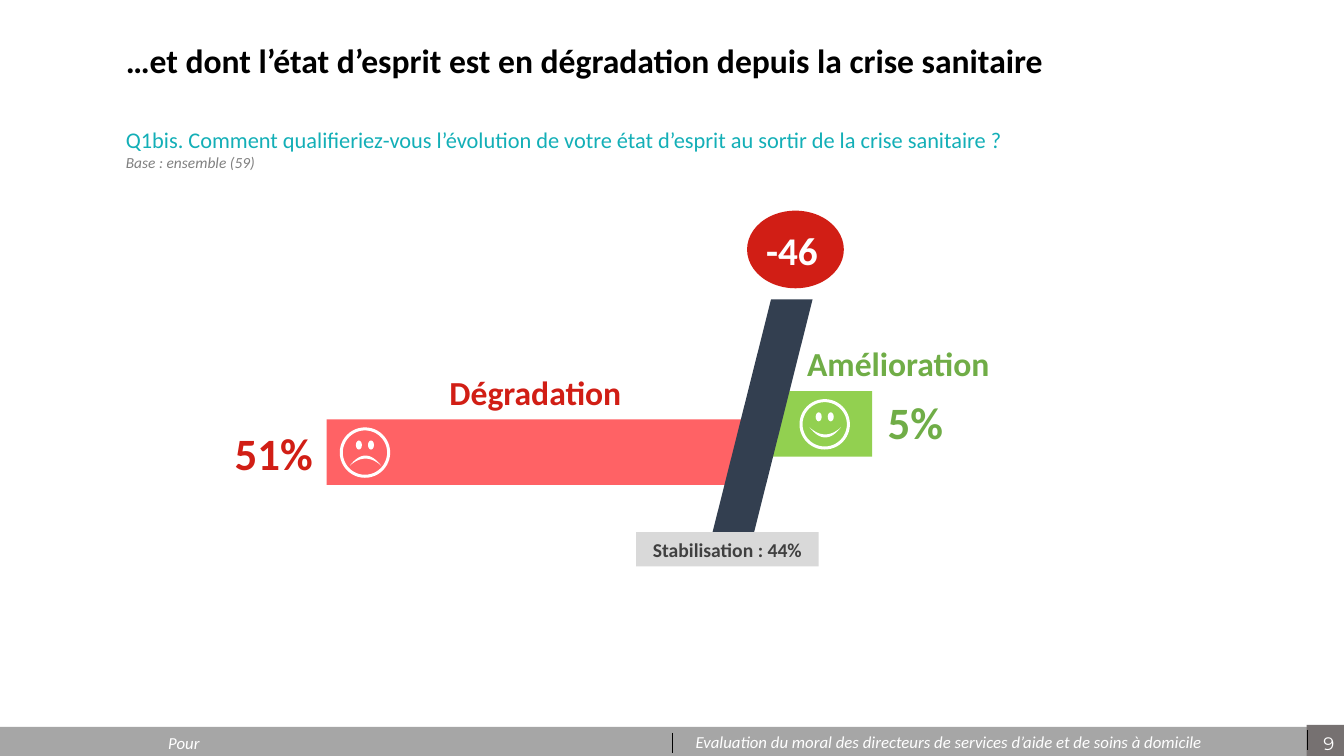
from lxml.etree import SubElement
from pptx import Presentation
from pptx.dml.color import RGBColor
from pptx.enum.shapes import MSO_CONNECTOR, MSO_SHAPE
from pptx.enum.text import MSO_ANCHOR, PP_ALIGN
from pptx.oxml.ns import qn
from pptx.util import Emu, Pt

PX = 9144  # 100 px to the inch
WIDTH, HEIGHT = 1333, 750

WHITE = RGBColor(0xFF, 0xFF, 0xFF)
BLACK = RGBColor(0x00, 0x00, 0x00)
FOOTER_GREY = RGBColor(0xA6, 0xA6, 0xA6)
NUMBER_GREY = RGBColor(0x76, 0x71, 0x71)
BASE_GREY = RGBColor(0x80, 0x80, 0x80)
LABEL_GREY = RGBColor(0xD9, 0xD9, 0xD9)
DARK_GREY = RGBColor(0x40, 0x40, 0x40)
TEAL = RGBColor(0x13, 0xAF, 0xB7)
NAVY = RGBColor(0x33, 0x3F, 0x50)
RED = RGBColor(0xD1, 0x1E, 0x15)
CORAL = RGBColor(0xFF, 0x62, 0x65)
GREEN = RGBColor(0x70, 0xAD, 0x47)
LIME = RGBColor(0x92, 0xD0, 0x50)


def write(paragraph, text, size=12, color=BLACK, bold=False, italic=False,
          align=PP_ALIGN.LEFT, spacing=1.0, font="Calibri"):
    paragraph.alignment = align
    paragraph.line_spacing = spacing
    span = paragraph.add_run()
    span.text = text
    span.font.name = font
    span.font.size = Pt(size)
    span.font.bold = bold
    span.font.italic = italic
    span.font.color.rgb = color


class SlidePainter:
    def __init__(self, page):
        self.shapes = page.shapes

    def plain(self, shape, fill):
        shape.shadow.inherit = False
        shape.fill.solid()
        shape.fill.fore_color.rgb = fill
        shape.line.fill.background()
        return shape

    def shape(self, kind, left, top, width, height, fill):
        place = [Emu(value * PX) for value in (left, top, width, height)]
        return self.plain(self.shapes.add_shape(kind, *place), fill)

    def text(self, left, top, width, height, text, wrap=True,
             anchor=MSO_ANCHOR.TOP, **style):
        place = [Emu(value * PX) for value in (left, top, width, height)]
        frame = self.shapes.add_textbox(*place).text_frame
        frame.word_wrap = wrap
        frame.vertical_anchor = anchor
        write(frame.paragraphs[0], text, **style)
        return frame

    def divider(self, x, top, bottom):
        line = self.shapes.add_connector(
            MSO_CONNECTOR.STRAIGHT, x * PX, top * PX, x * PX, bottom * PX)
        line.line.color.rgb = BLACK
        line.line.width = Pt(0.5)
        SubElement(line._element.spPr, qn("a:effectLst"))

    def mouth(self, left, corner, bend):
        """Crescent 31 px wide whose middle lies bend px below its corners."""
        steps = 24

        def curve(depth, order):
            return [(round((left + 31 * step / steps) * PX),
                     round((corner + 4 * depth * step * (steps - step) / steps ** 2) * PX))
                    for step in order]

        points = curve(bend, range(steps + 1)) + curve(0.7 * bend, range(steps, -1, -1))
        builder = self.shapes.build_freeform(*points[0], scale=1.0)
        builder.add_line_segments(points[1:], close=True)
        self.plain(builder.convert_to_shape(), WHITE)

    def face(self, left, top, happy):
        ring = self.shape(MSO_SHAPE.DONUT, left, top, 50, 50, WHITE)
        ring.adjustments[0] = 0.06
        for offset in (16, 28):
            self.shape(MSO_SHAPE.OVAL, left + offset, top + 13, 6, 9, WHITE)
        if happy:
            self.mouth(left + 10, top + 28, 10)
        else:
            self.mouth(left + 10, top + 38, -10)


def main():
    deck = Presentation()
    deck.slide_width, deck.slide_height = Emu(WIDTH * PX), Emu(HEIGHT * PX)
    painter = SlidePainter(deck.slides.add_slide(deck.slide_layouts[6]))
    center = PP_ALIGN.CENTER

    # Footer
    painter.shape(MSO_SHAPE.RECTANGLE, 0, 721, WIDTH, 29, FOOTER_GREY)
    painter.shape(MSO_SHAPE.RECTANGLE, 1296, 719, 37, 31, NUMBER_GREY)
    painter.divider(1297, 724, 744)
    painter.text(1291, 722, 54, 32, "9", wrap=False, size=12.9, color=WHITE,
                 align=center, font="Montserrat")
    painter.text(157, 722, 52, 30, "Pour", wrap=False, color=WHITE, italic=True)
    painter.text(680, 721, 575, 30,
                 "Evaluation du moral des directeurs de services d’aide et de soins à domicile",
                 color=WHITE, italic=True)
    painter.divider(667, 727, 747)

    # Title and question
    painter.text(115, 31, 1150, 62,
                 "…et dont l’état d’esprit est en dégradation depuis la crise sanitaire",
                 anchor=MSO_ANCHOR.MIDDLE, size=24, bold=True, spacing=0.9)
    question = painter.text(
        115, 123, 1055, 55,
        "Q1bis. Comment qualifieriez-vous l’évolution de votre état d’esprit "
        "au sortir de la crise sanitaire ?",
        size=16, color=TEAL, spacing=0.9)
    write(question.add_paragraph(), "Base : ensemble (59)", size=11,
          color=BASE_GREY, italic=True)

    # Bars on either side of the slanted axis
    painter.shape(MSO_SHAPE.RECTANGLE, 749, 388, 116, 65, LIME)
    painter.shape(MSO_SHAPE.RECTANGLE, 324, 416, 418, 65, CORAL)
    axis = painter.shape(MSO_SHAPE.PARALLELOGRAM, 703, 297, 103, 246, NAVY)
    axis.adjustments[0] = 0.6

    # Values and headings
    for left, top, width, value, color in ((870, 387, 76, "5%", GREEN),
                                           (222, 417, 99, "51%", RED)):
        painter.text(left, top, width, 64, value, wrap=False, size=32,
                     color=color, bold=True, align=center)
    for left, top, width, heading, color in ((407, 364, 248, "Dégradation", RED),
                                             (773, 335, 236, "Amélioration", GREEN)):
        painter.text(left, top, width, 50, heading, size=24, color=color,
                     bold=True, align=center)

    # Stable share
    stable = painter.shape(MSO_SHAPE.RECTANGLE, 631, 528, 181, 34, LABEL_GREY)
    stable.text_frame.word_wrap = True
    write(stable.text_frame.paragraphs[0], "Stabilisation : 44%", size=14,
          color=DARK_GREY, bold=True, align=center)

    # Balance
    painter.shape(MSO_SHAPE.OVAL, 741, 209, 96, 77, RED)
    painter.text(750, 220, 72, 57, "-46", wrap=False, size=28, color=WHITE, bold=True)

    # Faces
    painter.face(793, 396, happy=True)
    painter.face(337, 424, happy=False)

    deck.save("out.pptx")


if __name__ == "__main__":
    main()
